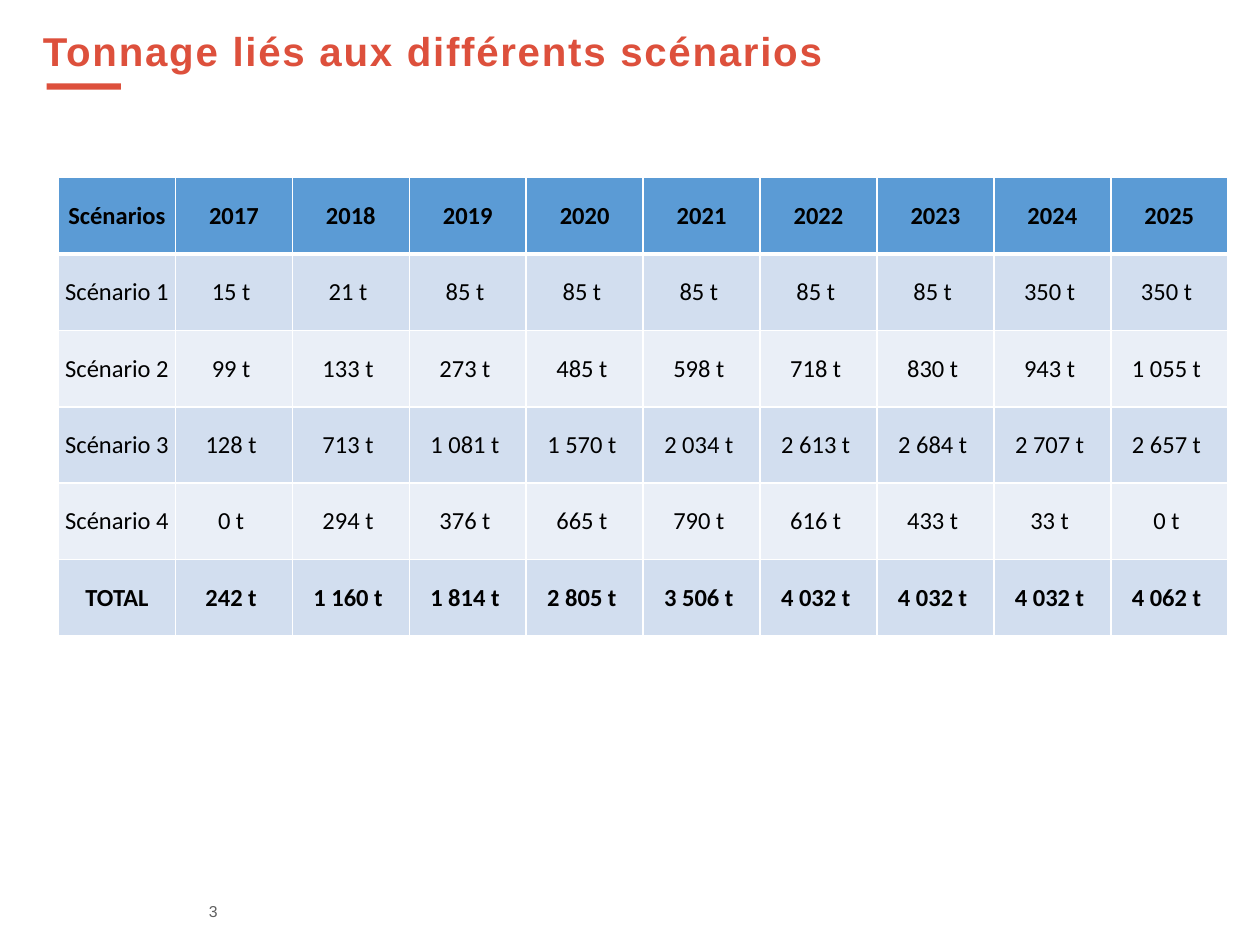
from lxml.etree import SubElement
from pptx import Presentation
from pptx.dml.color import RGBColor
from pptx.enum.shapes import MSO_SHAPE
from pptx.enum.text import MSO_ANCHOR, PP_ALIGN
from pptx.oxml.ns import qn
from pptx.util import Cm, Pt

RED = RGBColor(0xDD, 0x50, 0x3C)
GREY = RGBColor(0x5F, 0x5F, 0x5F)
BLACK = RGBColor(0x00, 0x00, 0x00)
WHITE = RGBColor(0xFF, 0xFF, 0xFF)
HEADER_BLUE = RGBColor(0x5B, 0x9B, 0xD5)
BAND_DARK = RGBColor(0xD2, 0xDE, 0xEF)
BAND_LIGHT = RGBColor(0xEA, 0xEF, 0xF7)

YEARS = range(2017, 2026)
TONNAGES = {
    "Scénario 1": [15, 21, 85, 85, 85, 85, 85, 350, 350],
    "Scénario 2": [99, 133, 273, 485, 598, 718, 830, 943, 1055],
    "Scénario 3": [128, 713, 1081, 1570, 2034, 2613, 2684, 2707, 2657],
    "Scénario 4": [0, 294, 376, 665, 790, 616, 433, 33, 0],
    "TOTAL": [242, 1160, 1814, 2805, 3506, 4032, 4032, 4032, 4062],
}


def style_text(frame, font_name, size, color, bold=False):
    span = frame.paragraphs[0].runs[0]
    span.font.name = font_name
    span.font.size = Pt(size)
    span.font.color.rgb = color
    span.font.bold = bold
    return span


def add_title(page, text):
    title = page.shapes.title
    title.left, title.top, title.width, title.height = Cm(0.61), Cm(0.51), Cm(20.35), Cm(1.83)
    frame = title.text_frame
    frame.text = text
    frame.word_wrap = True
    frame.vertical_anchor = MSO_ANCHOR.TOP
    para = frame.paragraphs[0]
    para.alignment = PP_ALIGN.LEFT
    para.line_spacing = 0.9
    span = style_text(frame, "Arial", 23, RED, bold=True)
    span.font._element.set("spc", "100")


def add_title_rule(page):
    rule = page.shapes.add_shape(MSO_SHAPE.RECTANGLE, Cm(0.94), Cm(1.68), Cm(1.5), Cm(0.13))
    rule.shadow.inherit = False
    rule.fill.solid()
    rule.fill.fore_color.rgb = RED
    rule.line.fill.background()


def add_page_number(page, text):
    box = page.shapes.add_textbox(Cm(3.96), Cm(18.14), Cm(0.94), Cm(0.46))
    frame = box.text_frame
    frame.text = text
    frame.word_wrap = True
    frame.vertical_anchor = MSO_ANCHOR.MIDDLE
    frame.margin_top = frame.margin_bottom = 0
    style_text(frame, "Arial", 9, GREY)


def set_borders(cell, top, bottom):
    properties = cell._tc.get_or_add_tcPr()
    for side, width in (("L", 1), ("R", 1), ("T", top), ("B", bottom)):
        line = SubElement(properties, qn(f"a:ln{side}"), w=str(Pt(width)))
        fill = SubElement(line, qn("a:solidFill"))
        SubElement(fill, qn("a:srgbClr"), val=str(WHITE))


def fill_cell(cell, text, color, bold):
    cell.fill.solid()
    cell.fill.fore_color.rgb = color
    cell.vertical_anchor = MSO_ANCHOR.MIDDLE
    cell.margin_left = cell.margin_right = cell.margin_top = cell.margin_bottom = 0
    cell.text_frame.text = text
    cell.text_frame.paragraphs[0].alignment = PP_ALIGN.CENTER
    style_text(cell.text_frame, "Calibri", 14, BLACK, bold)


def format_tonnage(value):
    return f"{value:,} t ".replace(",", " ")


def add_tonnage_table(page):
    rows = [["Scénarios", *map(str, YEARS)]]
    rows += [[name, *map(format_tonnage, values)] for name, values in TONNAGES.items()]
    frame = page.shapes.add_table(
        len(rows), len(rows[0]), Cm(1.18), Cm(3.58), Cm(23.57), Cm(9.24)
    )
    table = frame.table
    table.first_row = table.horz_banding = False
    for row_index, texts in enumerate(rows):
        is_header = row_index == 0
        band = BAND_DARK if row_index % 2 else BAND_LIGHT
        color = HEADER_BLUE if is_header else band
        bold = is_header or texts[0] == "TOTAL"
        for column_index, text in enumerate(texts):
            cell = table.cell(row_index, column_index)
            set_borders(cell, top=3 if row_index == 1 else 1, bottom=3 if is_header else 1)
            fill_cell(cell, text, color, bold)


def main():
    deck = Presentation()
    deck.slide_width, deck.slide_height = Cm(25.4), Cm(19.05)
    page = deck.slides.add_slide(deck.slide_layouts[5])
    add_page_number(page, "3")
    add_title(page, "Tonnage liés aux différents scénarios")
    add_title_rule(page)
    add_tonnage_table(page)
    deck.save("out.pptx")


if __name__ == "__main__":
    main()
